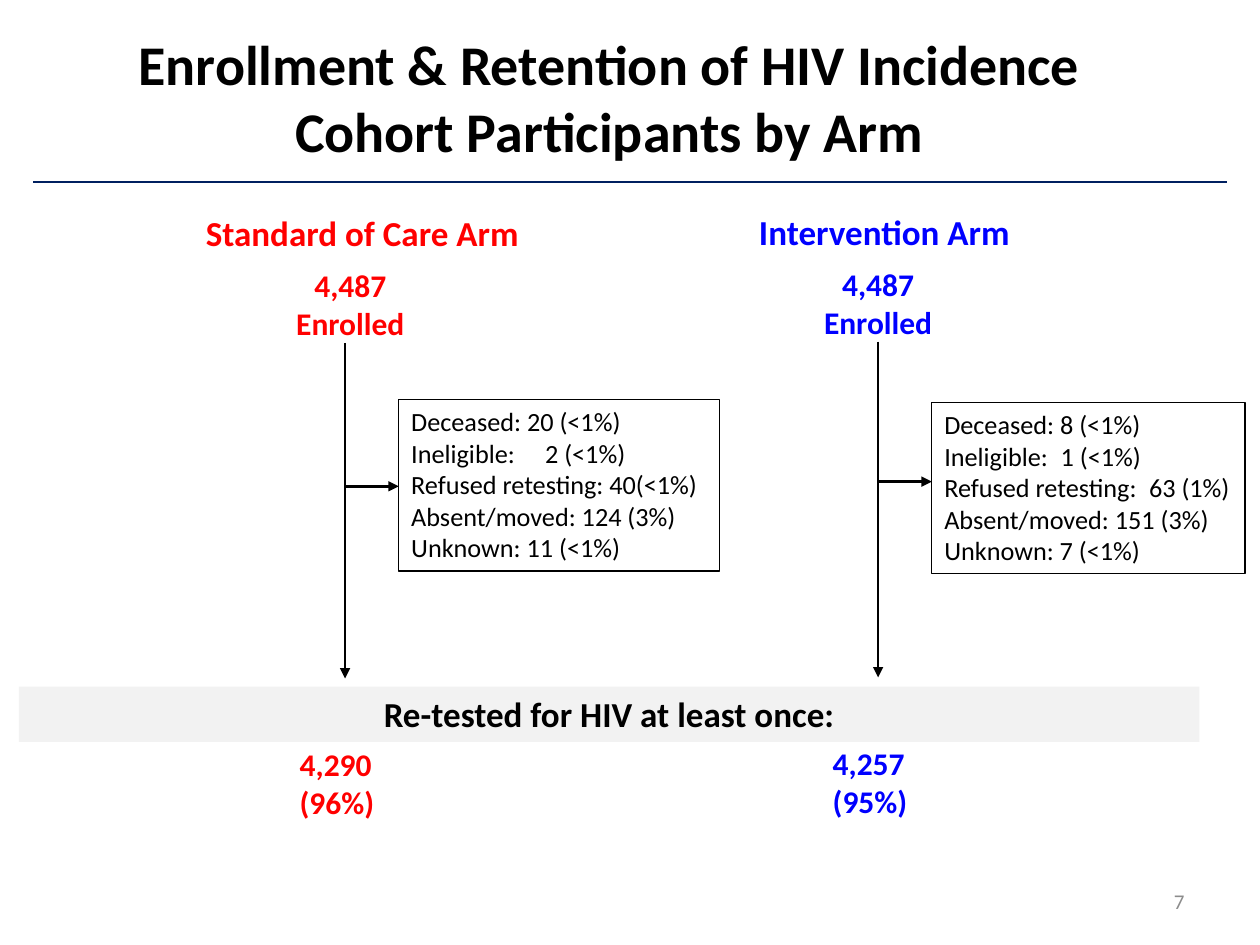
from dataclasses import dataclass

from lxml.etree import SubElement
from pptx import Presentation
from pptx.dml.color import RGBColor
from pptx.enum.shapes import MSO_CONNECTOR, MSO_SHAPE
from pptx.enum.text import MSO_ANCHOR, PP_ALIGN
from pptx.oxml.ns import qn
from pptx.util import Pt


@dataclass(frozen=True)
class Theme:
    font: str = "Calibri"
    black: str = "000000"
    white: str = "FFFFFF"
    navy: str = "002060"
    red: str = "FF0000"
    blue: str = "0000FF"
    band: str = "F2F2F2"
    grey: str = "8C8C8C"
    title: int = 32
    heading: int = 20
    count: int = 18
    losses: int = 15
    number: int = 12


THEME = Theme()


@dataclass(frozen=True)
class Box:
    left: float
    top: float
    width: float
    height: float

    def inner(self, left, top, width, height):
        """Box given relative to this one."""
        return Box(self.left + left, self.top + top, width, height)

    def points(self):
        return Pt(self.left), Pt(self.top), Pt(self.width), Pt(self.height)


@dataclass(frozen=True)
class Arm:
    name: str
    color: str
    enrolled: str
    losses: tuple
    tab_stops: tuple
    retested: str
    stem: float
    enrolled_center: float
    losses_top: float
    branch: float


def write_text(shape, text, *, size, color=THEME.black, bold=False,
               align=PP_ALIGN.LEFT, anchor=MSO_ANCHOR.TOP, tab_stops=()):
    frame = shape.text_frame
    frame.word_wrap = True
    frame.vertical_anchor = anchor
    frame.text = text
    for paragraph in frame.paragraphs:
        paragraph.alignment = align
        for run in paragraph.runs:
            run.font.name = THEME.font
            run.font.size = Pt(size)
            run.font.bold = bold
            run.font.color.rgb = RGBColor.from_string(color)
        if tab_stops:
            properties = paragraph._p.get_or_add_pPr()
            tabs = SubElement(properties, qn("a:tabLst"))
            for stop in tab_stops:
                SubElement(tabs, qn("a:tab"), pos=str(Pt(stop)), algn="l")


def add_text(slide, box, text, **text_format):
    write_text(slide.shapes.add_textbox(*box.points()), text, **text_format)


def add_rectangle(slide, box, fill=None, line=None, line_width=0.75):
    shape = slide.shapes.add_shape(MSO_SHAPE.RECTANGLE, *box.points())
    shape.shadow.inherit = False
    if fill:
        shape.fill.solid()
        shape.fill.fore_color.rgb = RGBColor.from_string(fill)
    else:
        shape.fill.background()
    if line:
        shape.line.color.rgb = RGBColor.from_string(line)
        shape.line.width = Pt(line_width)
    else:
        shape.line.fill.background()
    return shape


def add_arrow(slide, start_x, start_y, end_x, end_y):
    arrow = slide.shapes.add_connector(
        MSO_CONNECTOR.STRAIGHT, Pt(start_x), Pt(start_y), Pt(end_x), Pt(end_y))
    arrow.line.color.rgb = RGBColor.from_string(THEME.black)
    arrow.line.width = Pt(1.5)
    SubElement(arrow.line._get_or_add_ln(), qn("a:tailEnd"), type="triangle")
    SubElement(arrow._element.spPr, qn("a:effectLst"))


def add_title(slide, box, text):
    title = slide.shapes.title
    title.left, title.top, title.width, title.height = box.points()
    write_text(title, text, size=THEME.title, bold=True,
               align=PP_ALIGN.CENTER, anchor=MSO_ANCHOR.MIDDLE)


def add_arm(slide, box, arm, heading_width):
    """Draw one arm's flow; its losses box ends at the right of the box."""
    add_text(slide, box.inner(0, 0, heading_width, 31.5), arm.name,
             size=THEME.heading, color=arm.color, bold=True, align=PP_ALIGN.CENTER)
    count_format = dict(size=THEME.count, color=arm.color, bold=True)
    add_text(slide, box.inner(arm.enrolled_center - 46, 31, 92, 51), arm.enrolled,
             align=PP_ALIGN.CENTER, **count_format)
    add_text(slide, box.inner(arm.stem - 33, 305, 67, 51), arm.retested, **count_format)

    stem_x = box.left + arm.stem
    losses_left = arm.stem + 30.7
    add_arrow(slide, stem_x, box.top + 78.5, stem_x, box.top + 270.3)
    losses = add_rectangle(
        slide, box.inner(losses_left, arm.losses_top, box.width - losses_left, 98),
        line=THEME.black)
    write_text(losses, "\n".join(arm.losses), size=THEME.losses, tab_stops=arm.tab_stops)
    branch_y = box.top + arm.branch
    add_arrow(slide, stem_x, branch_y, box.left + losses_left, branch_y)


def add_retested_band(slide, box):
    band = add_rectangle(slide, box, fill=THEME.band)
    write_text(band, "Re-tested for HIV at least once:", size=THEME.heading,
               bold=True, align=PP_ALIGN.CENTER)


def main():
    presentation = Presentation()
    presentation.slide_width, presentation.slide_height = Pt(720), Pt(540)
    slide = presentation.slides.add_slide(presentation.slide_layouts[5])

    standard = Arm(
        "Standard of Care Arm", THEME.red, "4,487 Enrolled",
        ("Deceased: 20 (<1%)", "Ineligible:\t2 (<1%)", "Refused retesting: 40(<1%)",
         "Absent/moved: 124 (3%)", "Unknown: 11 (<1%)"),
        (76.5,), "4,290 (96%)",
        stem=87, enrolled_center=90, losses_top=110.9, branch=160.5)
    intervention = Arm(
        "Intervention Arm", THEME.blue, "4,487 Enrolled",
        ("Deceased: 8 (<1%)", "Ineligible:\t1 (<1%)", "Refused retesting:\t63 (1%)",
         "Absent/moved: 151 (3%)", "Unknown: 7 (<1%)"),
        (66.5, 117), "4,257 (95%)",
        stem=75.6, enrolled_center=75.6, losses_top=113, branch=158.4)

    add_title(slide, Box(36.5, 25, 623.5, 60),
              "Enrollment & Retention of HIV Incidence Cohort Participants by Arm")
    add_retested_band(slide, Box(10.8, 392.4, 674.6, 31.5))
    add_arm(slide, Box(110.2, 117.4, 301, 356), standard, heading_width=193.7)
    add_arm(slide, Box(426.2, 116.8, 285.2, 356), intervention, heading_width=158.4)
    add_rectangle(slide, Box(18, 102.2, 684, 3.6), fill=THEME.navy,
                  line=THEME.white, line_width=2)
    add_text(slide, Box(516, 500.5, 168, 28.75), "7", size=THEME.number,
             color=THEME.grey, align=PP_ALIGN.RIGHT, anchor=MSO_ANCHOR.MIDDLE)
    presentation.save("out.pptx")


if __name__ == "__main__":
    main()
